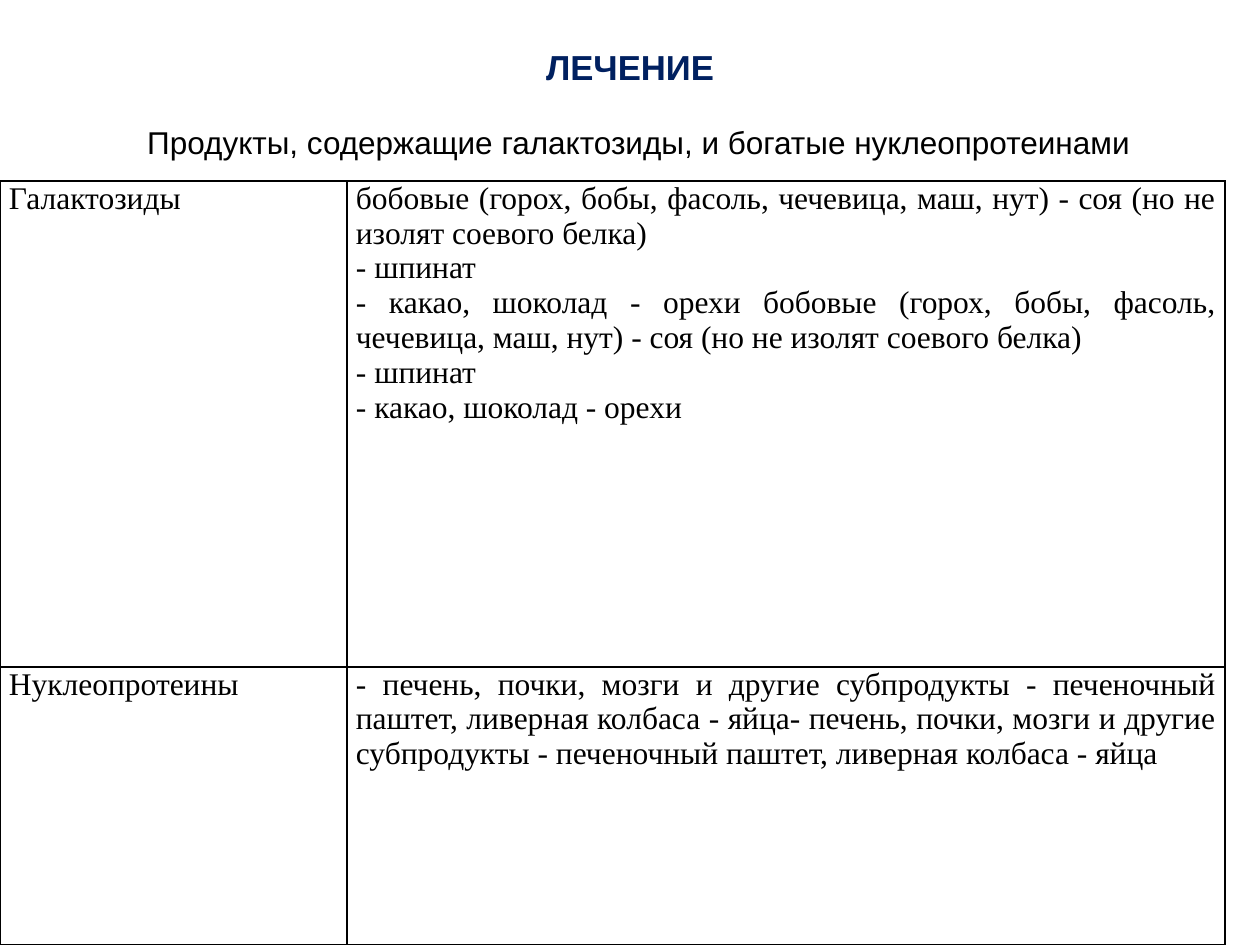
from lxml.etree import SubElement
from pptx import Presentation
from pptx.dml.color import RGBColor
from pptx.enum.text import MSO_ANCHOR, MSO_AUTO_SIZE, PP_ALIGN
from pptx.oxml.ns import qn
from pptx.util import Pt

PX = 914400 // 126


def style(r, font, size, color, bold=False):
    r.font.name = font
    r.font.size = Pt(size)
    r.font.bold = bold
    r.font.color.rgb = RGBColor.from_string(color)


def add_borders(cell, color):
    tcPr = cell._tc.get_or_add_tcPr()
    for side in ("lnL", "lnR", "lnT", "lnB"):
        ln = SubElement(tcPr, qn(f"a:{side}"), w=str(Pt(1)))
        fill = SubElement(ln, qn("a:solidFill"))
        SubElement(fill, qn("a:srgbClr"), val=color)


prs = Presentation()
prs.slide_width = 1260 * PX
prs.slide_height = 945 * PX
s = prs.slides.add_slide(prs.slide_layouts[5])

title = s.shapes.title
title.left, title.top, title.width, title.height = 0, 0, 1260 * PX, 125 * PX
tf = title.text_frame
tf.auto_size = MSO_AUTO_SIZE.NONE
tf.word_wrap = True
tf.vertical_anchor = MSO_ANCHOR.TOP
tf.margin_top = 46 * PX
tf.margin_bottom = 0

p = tf.paragraphs[0]
p.text = "ЛЕЧЕНИЕ"
p.alignment = PP_ALIGN.CENTER
style(p.runs[0], "Arial", 19.8, "002060", True)

p = tf.add_paragraph()
p.alignment = PP_ALIGN.CENTER
p.space_before = Pt(2)
for text, size in (
    (" ", 36),
    ("Продукты, содержащие галактозиды, и богатые нуклеопротеинами", 18),
):
    r = p.add_run()
    r.text = text
    style(r, "Arial", size, "000000")

rows = [
    ("Галактозиды",
     "бобовые (горох, бобы, фасоль, чечевица, маш, нут) - соя (но не изолят соевого белка)\n"
     "- шпинат\n"
     "- какао, шоколад - орехи бобовые (горох, бобы, фасоль, чечевица, маш, нут) - соя (но не изолят соевого белка)\n"
     "- шпинат\n"
     "- какао, шоколад - орехи"),
    ("Нуклеопротеины",
     "- печень, почки, мозги и другие субпродукты - печеночный паштет, ливерная колбаса - яйца"
     "- печень, почки, мозги и другие субпродукты - печеночный паштет, ливерная колбаса - яйца"),
]
widths = (347, 878)
heights = (486, 278)
table = s.shapes.add_table(
    2, 2, 0, 181 * PX, sum(widths) * PX, sum(heights) * PX
).table
table.first_row = False
table.horz_banding = False
for column, width in zip(table.columns, widths):
    column.width = width * PX
for row, height, texts in zip(table.rows, heights, rows):
    row.height = height * PX
    for cell, text in zip(row.cells, texts):
        cell.margin_left = cell.margin_right = 9 * PX
        cell.margin_top = cell.margin_bottom = 0
        add_borders(cell, "000000")
        cell.fill.background()
        cell.text_frame.text = text
        for p in cell.text_frame.paragraphs:
            p.alignment = PP_ALIGN.JUSTIFY
            style(p.runs[0], "Times New Roman", 18, "000000")

prs.save("out.pptx")
